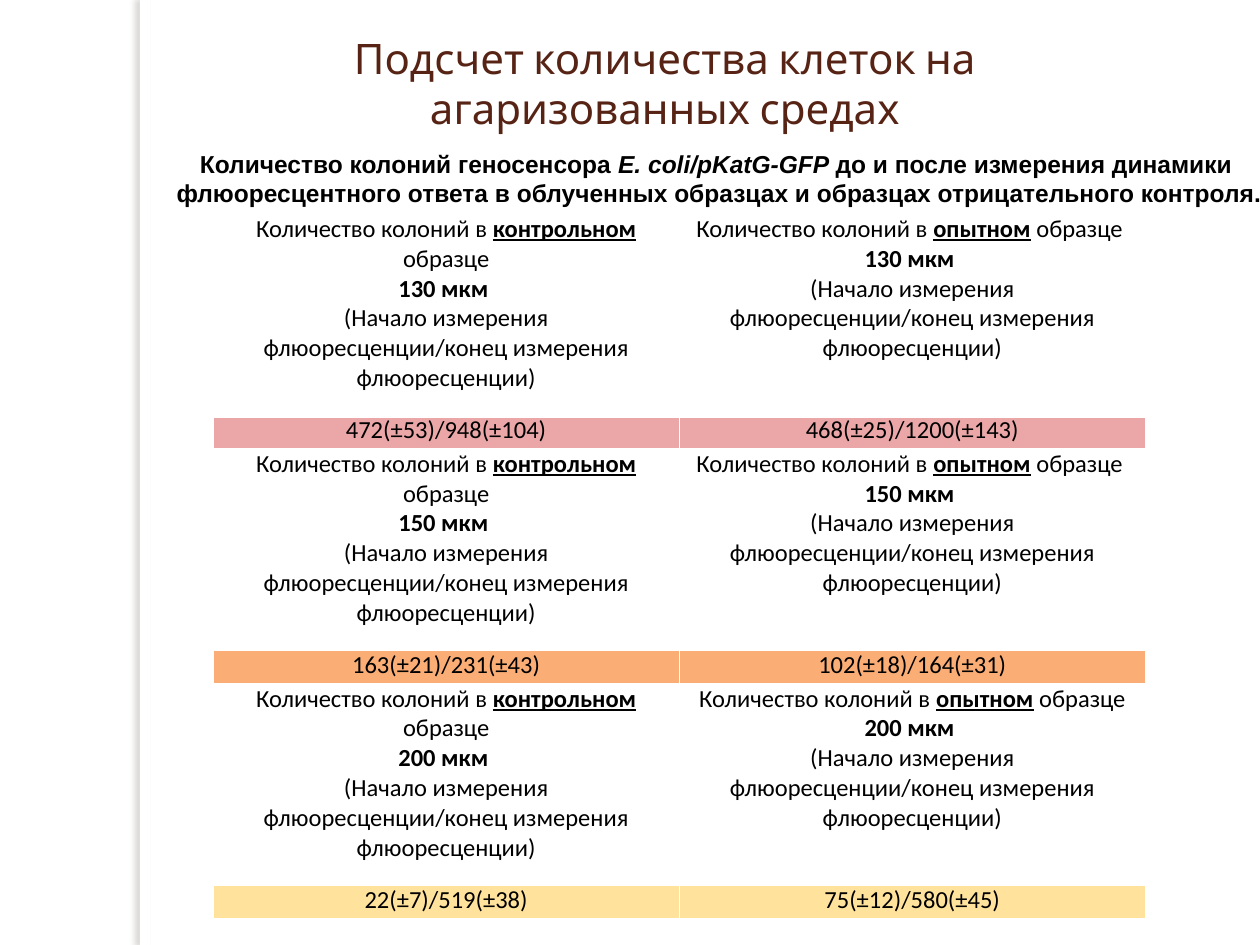
from pptx import Presentation
from pptx.dml.color import RGBColor
from pptx.enum.shapes import MSO_SHAPE
from pptx.enum.text import MSO_ANCHOR, MSO_AUTO_SIZE, PP_ALIGN
from pptx.oxml import parse_xml
from pptx.oxml.ns import nsdecls
from pptx.util import Pt

TITLE = "Подсчет количества клеток на агаризованных средах"
CAPTION = [
    [("Количество колоний геносенсора ", "b"), ("E. coli/pKatG-GFP ", "bi"),
     ("до и после измерения динамики ", "b")],
    [("флюоресцентного ответа в облученных образцах и образцах "
      "отрицательного контроля.", "b")],
]
KINDS = ["контрольном", "опытном"]
TAILS = [(" образце", " образце "), (" образце", " образце "), (" образце", " образце")]
NOTE = "(Начало измерения флюоресценции/конец измерения флюоресценции)"
GROUPS = [
    ("130 мкм ", "EBA7A8", ("472(±53)/948(±104)", "468(±25)/1200(±143)")),
    ("150 мкм ", "FAAE76", ("163(±21)/231(±43)", "102(±18)/164(±31)")),
    ("200 мкм ", "FFE39D", ("22(±7)/519(±38)", "75(±12)/580(±45)")),
]
WHITE, BLACK, BROWN = "FFFFFF", "000000", "572314"
LEFT, TOP, COL, HEAD, VALUE = 121.8, 122.4, 266.4, 115, 19.2


def paint(fill, color):
    fill.solid()
    fill.fore_color.rgb = RGBColor.from_string(color)


def write(frame, paras, font, size, color=BLACK):
    frame.word_wrap = True
    for i, runs in enumerate(paras):
        para = frame.paragraphs[0] if i == 0 else frame.add_paragraph()
        para.alignment = PP_ALIGN.CENTER
        for text, style in runs:
            run = para.add_run()
            run.text = text
            face = run.font
            face.name, face.size = font, Pt(size)
            face.bold, face.italic = "b" in style, "i" in style
            face.underline = "u" in style
            face.color.rgb = RGBColor.from_string(color)


def edge(cell, thick):
    props = cell._tc.get_or_add_tcPr()
    for i, side in enumerate(("lnL", "lnR", "lnT", "lnB")):
        width = Pt(thick if side == "lnB" else 1)
        props.insert(i, parse_xml(
            f'<a:{side} {nsdecls("a")} w="{width}"><a:solidFill>'
            f'<a:srgbClr val="{WHITE}"/></a:solidFill></a:{side}>'))


def fill_cell(cell, paras, color, thick=1):
    cell.margin_left = cell.margin_right = Pt(5)
    cell.margin_top = cell.margin_bottom = 0
    write(cell.text_frame, paras, "Calibri", 14)
    paint(cell.fill, color)
    edge(cell, thick)


deck = Presentation()
deck.slide_width, deck.slide_height = Pt(720), Pt(540)
slide = deck.slides.add_slide(deck.slide_layouts[5])
shapes = slide.shapes
paint(slide.background.fill, WHITE)

band = shapes.add_shape(MSO_SHAPE.RECTANGLE, Pt(80), 0, Pt(5.8), Pt(540))
paint(band.fill, WHITE)
band.line.fill.background()
band.shadow.inherit = False
band._element.spPr.find("{*}effectLst").append(parse_xml(
    f'<a:outerShdw {nsdecls("a")} blurRad="{Pt(3)}" dist="{Pt(3)}" dir="10800000" '
    'algn="tl" rotWithShape="0"><a:srgbClr val="736F63">'
    '<a:alpha val="25000"/></a:srgbClr></a:outerShdw>'))

title = shapes.title
title.left, title.top, title.width, title.height = Pt(127.4), Pt(15), Pt(505), Pt(65.5)
write(title.text_frame, [[(TITLE, "")]], "Cabin", 24, BROWN)
title.text_frame.vertical_anchor = MSO_ANCHOR.TOP
title.text_frame.auto_size = MSO_AUTO_SIZE.SHAPE_TO_FIT_TEXT

rows, cols = 2 * len(GROUPS), len(KINDS)
table = shapes.add_table(rows, cols, Pt(LEFT), Pt(TOP), Pt(COL * cols),
                         Pt((HEAD + VALUE) * len(GROUPS))).table
table.first_row = table.horz_banding = False
for col in table.columns:
    col.width = Pt(COL)
for i, row in enumerate(table.rows):
    row.height = Pt(VALUE if i % 2 else HEAD)
for g, (size, color, values) in enumerate(GROUPS):
    for c, kind in enumerate(KINDS):
        head = [[("Количество колоний в ", ""), (kind, "bu"), (TAILS[g][c], "")],
                [(size, "b")], [(NOTE, "")]]
        fill_cell(table.cell(2 * g, c), head, WHITE, 1 if g else 3)
        fill_cell(table.cell(2 * g + 1, c), [[(values[c], "")]], color)

box = shapes.add_textbox(Pt(87.8), Pt(81.4), Pt(646.6), Pt(41))
write(box.text_frame, CAPTION, "Arial", 14)
box.text_frame.vertical_anchor = MSO_ANCHOR.MIDDLE
box.text_frame.auto_size = MSO_AUTO_SIZE.SHAPE_TO_FIT_TEXT

deck.save("out.pptx")
